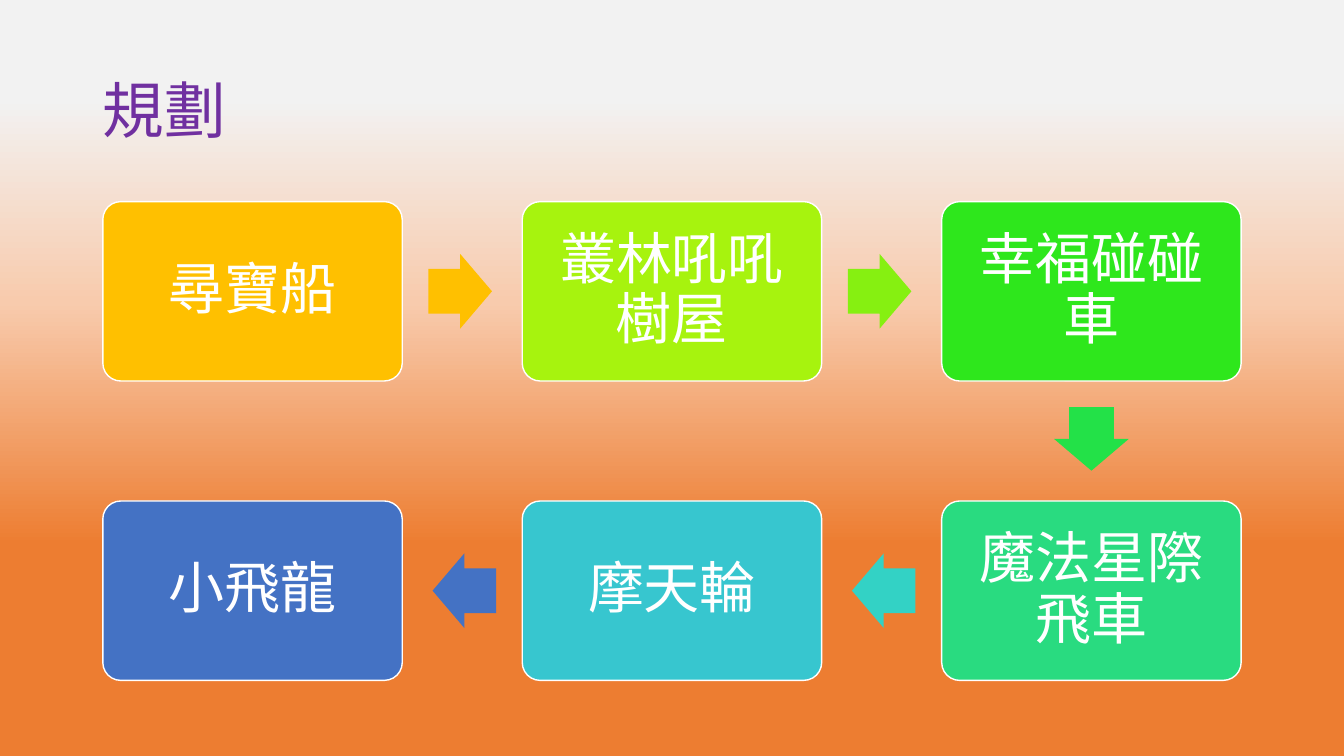
import copy
from dataclasses import dataclass

import pptx
import pptx.dml.color
import pptx.enum.shapes
import pptx.enum.text
import pptx.util

SLIDE_W, SLIDE_H = 13.33, 7.5
FONT = "Calibri"
# Grid of ride cards: first card, card size and pitch
LEFT, TOP = 1.02, 2.0
CARD_W, CARD_H = 2.97, 1.78
COLUMN, ROW = 4.16, 2.97
ARROW_W, ARROW_H = 0.63, 0.74
ARROW_SETBACK = 0.02
ANGLES = {(1, 0): 0, (0, 1): 90, (-1, 0): 180}
BACKGROUND = [(0.13, "F2F2F2"), (0.4, "F8CBAD"), (0.72, "ED7D31")]


@dataclass
class Ride:
    name: str
    column: int
    row: int
    fill: str

    @property
    def center(self) -> tuple[float, float]:
        return (LEFT + self.column * COLUMN + CARD_W / 2,
                TOP + self.row * ROW + CARD_H / 2)


RIDES = [
    Ride("尋寶船", 0, 0, "FFC000"),
    Ride("叢林吼吼樹屋", 1, 0, "A7F30E"),
    Ride("幸福碰碰車", 2, 0, "2EE71C"),
    Ride("魔法星際飛車", 2, 1, "29DB80"),
    Ride("摩天輪", 1, 1, "37C6CF"),
    Ride("小飛龍", 0, 1, "4472C4"),
]
ARROW_FILLS = ["FFC000", "86F011", "23E148", "33D2C5", "4472C4"]


def color(value: str) -> pptx.dml.color.RGBColor:
    return pptx.dml.color.RGBColor.from_string(value)


def write(shape, text: str, size: float, ink: str, align, inset: dict) -> None:
    frame = shape.text_frame
    margins = {f"margin_{side}": pptx.util.Inches(gap) for side, gap in inset.items()}
    frame_format = {"word_wrap": True,
                    "vertical_anchor": pptx.enum.text.MSO_ANCHOR.MIDDLE, **margins}
    for key, value in frame_format.items():
        setattr(frame, key, value)
    paragraph = frame.paragraphs[0]
    paragraph.alignment = align
    paragraph.line_spacing = 0.9
    run = paragraph.add_run()
    run.text = text
    for key, value in {"name": FONT, "size": pptx.util.Pt(size)}.items():
        setattr(run.font, key, value)
    run.font.color.rgb = color(ink)


def add_filled(slide, kind, center: tuple[float, float], width: float,
               height: float, fill: str, adjustments: list[float]):
    x, y = center
    shape = slide.shapes.add_shape(
        kind, *map(pptx.util.Inches, (x - width / 2, y - height / 2, width, height)))
    shape.shadow.inherit = False
    shape.fill.solid()
    shape.fill.fore_color.rgb = color(fill)
    for index, value in enumerate(adjustments):
        shape.adjustments[index] = value
    return shape


def draw_ride(slide, ride: Ride) -> None:
    card = add_filled(slide, pptx.enum.shapes.MSO_SHAPE.ROUNDED_RECTANGLE,
                      ride.center, CARD_W, CARD_H, ride.fill, [0.1])
    card.line.color.rgb = color("FFFFFF")
    card.line.width = pptx.util.Pt(1)
    write(card, ride.name, 40, "FFFFFF", pptx.enum.text.PP_ALIGN.CENTER,
          dict.fromkeys(("left", "top", "right", "bottom"), 0.17))


def draw_arrow(slide, start: Ride, end: Ride, fill: str) -> None:
    direction = (end.column - start.column, end.row - start.row)
    center = tuple((a + b) / 2 - ARROW_SETBACK * d
                   for a, b, d in zip(start.center, end.center, direction))
    arrow = add_filled(slide, pptx.enum.shapes.MSO_SHAPE.RIGHT_ARROW,
                       center, ARROW_W, ARROW_H, fill, [0.6, 0.5])
    arrow.line.fill.background()
    arrow.rotation = ANGLES[direction]


def paint_background(slide) -> None:
    fill = slide.background.fill
    fill.gradient()
    fill.gradient_angle = 270
    stop_list = slide.element.xpath(".//a:gsLst")[0]
    stop_list.append(copy.deepcopy(stop_list[-1]))
    for stop, (position, value) in zip(fill.gradient_stops, BACKGROUND):
        stop.position = position
        stop.color.rgb = color(value)


def main() -> None:
    deck = pptx.Presentation()
    deck.slide_width = pptx.util.Inches(SLIDE_W)
    deck.slide_height = pptx.util.Inches(SLIDE_H)
    slide = deck.slides.add_slide(deck.slide_layouts[6])
    paint_background(slide)

    # Heading
    heading = slide.shapes.add_textbox(*map(pptx.util.Inches, (0.92, 0.4, 11.5, 1.45)))
    write(heading, "規劃", 44, "7030A0", pptx.enum.text.PP_ALIGN.LEFT, {})

    # Route through the rides
    for ride in RIDES:
        draw_ride(slide, ride)
    for start, end, fill in zip(RIDES, RIDES[1:], ARROW_FILLS):
        draw_arrow(slide, start, end, fill)

    deck.save("out.pptx")


if __name__ == "__main__":
    main()
